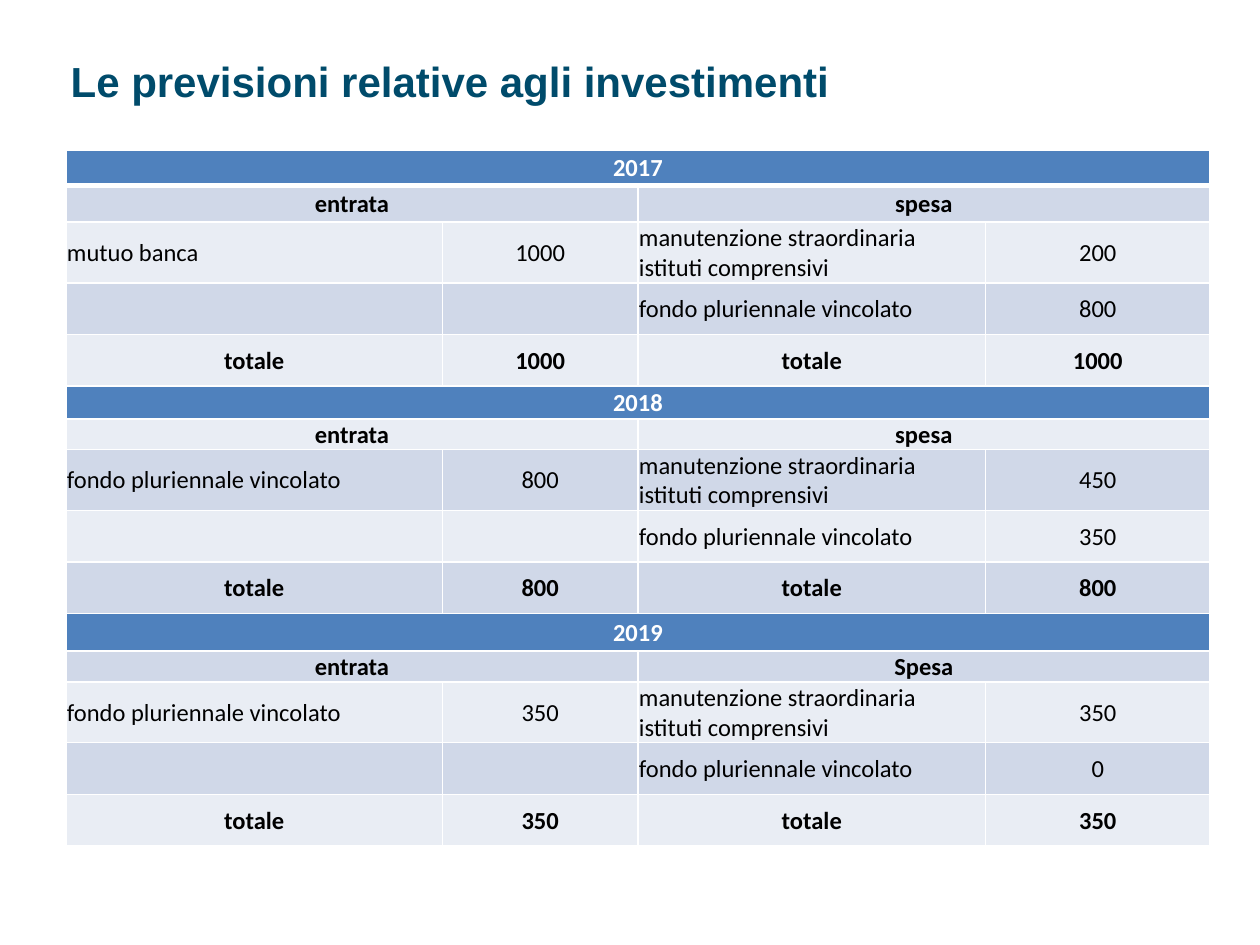
from typing import NamedTuple

from pptx import Presentation
from pptx.dml.color import RGBColor
from pptx.enum.text import MSO_ANCHOR, MSO_AUTO_SIZE, PP_ALIGN
from pptx.oxml import parse_xml
from pptx.oxml.ns import nsdecls
from pptx.util import Cm, Pt

NAVY, BLUE, WHITE, BLACK = "004B6B", "4F81BD", "FFFFFF", "000000"
BANDS = ("E9EDF4", "D0D8E8")
WIDTHS = (7.59, 3.94, 7.01, 4.52)
LABELS = (0, 2)
FUND = "fondo pluriennale vincolato"
WORKS = "manutenzione straordinaria istituti comprensivi"


class Year(NamedTuple):
    name: str
    cost: str       # heading of the spending side
    source: str
    total: str
    works: str
    fund: str
    heights: tuple  # year row and heading row, in cm


YEARS = (
    Year("2017", "spesa", "mutuo banca", "1000", "200", "800", (0.71, 0.74)),
    Year("2018", "spesa", FUND, "800", "450", "350", (0.66, 0.56)),
    Year("2019", "Spesa", FUND, "350", "350", "0", (0.76, 0.58)),
)


def color(code: str) -> RGBColor:
    return RGBColor.from_string(code)


def add_run(para, text: str, font: str, size: int, ink: str, bold: bool) -> None:
    run = para.add_run()
    run.text = text
    run.font.name, run.font.size, run.font.bold = font, Pt(size), bold
    run.font.color.rgb = color(ink)


def set_edges(cell, top: int, base: int) -> None:
    props = cell._tc.get_or_add_tcPr()
    for side, width in (("L", 1), ("R", 1), ("T", top), ("B", base)):
        props.append(parse_xml(
            f'<a:ln{side} {nsdecls("a")} w="{Pt(width)}"><a:solidFill>'
            f'<a:srgbClr val="{WHITE}"/></a:solidFill></a:ln{side}>'))


def fill_row(table, row: int, texts: tuple, fill: str, ink: str = BLACK,
             bold: bool = True) -> None:
    for col, text in enumerate(texts):
        cell = table.cell(row, col)
        # A thicker rule runs under the first row
        set_edges(cell, 3 if row == 1 else 1, 3 if row == 0 else 1)
        cell.fill.solid()
        cell.fill.fore_color.rgb = color(fill)
        cell.vertical_anchor = MSO_ANCHOR.MIDDLE
        cell.margin_left = cell.margin_right = cell.margin_top = Cm(0.02)
        cell.margin_bottom = 0
        if text:
            para = cell.text_frame.paragraphs[0]
            left = col in LABELS and not bold
            para.alignment = PP_ALIGN.LEFT if left else PP_ALIGN.CENTER
            add_run(para, text, "Calibri", 14, ink, bold)


def add_year(table, start: int, year: Year) -> None:
    heights = year.heights + (1.04,) * 3
    for step, height in enumerate(heights):
        table.rows[start + step].height = Cm(height)

    # Year and side headings
    table.cell(start, 0).merge(table.cell(start, 3))
    fill_row(table, start, (year.name, "", "", ""), BLUE, WHITE)
    for col in LABELS:
        table.cell(start + 1, col).merge(table.cell(start + 1, col + 1))
    fill_row(table, start + 1, ("entrata", "", year.cost, ""), BANDS[(start + 1) % 2])

    # Entries and totals
    body = (
        (year.source, year.total, WORKS, year.works),
        ("", "", FUND, year.fund),
        ("totale", year.total) * 2,
    )
    for row, texts in enumerate(body, start + 2):
        fill_row(table, row, texts, BANDS[row % 2], bold=texts[0] == "totale")


def main() -> None:
    deck = Presentation()
    deck.slide_width, deck.slide_height = Cm(25.4), Cm(19.05)
    slide = deck.slides.add_slide(deck.slide_layouts[5])

    # Title
    title = slide.shapes.title
    title.left, title.top = Cm(1.17), Cm(0.91)
    title.width, title.height = Cm(23.06), Cm(1.9)
    frame = title.text_frame
    frame.auto_size = MSO_AUTO_SIZE.NONE
    frame.vertical_anchor = MSO_ANCHOR.TOP
    para = frame.paragraphs[0]
    para.alignment = PP_ALIGN.LEFT
    para.line_spacing = Pt(31)
    add_run(para, "Le previsioni relative agli investimenti", "Arial", 24, NAVY, True)

    # Table, five rows a year
    table = slide.shapes.add_table(
        5 * len(YEARS), len(WIDTHS), Cm(1.33), Cm(3.03), Cm(23.06), Cm(13.92)).table
    for column, width in zip(table.columns, WIDTHS):
        column.width = Cm(width)
    for index, year in enumerate(YEARS):
        add_year(table, 5 * index, year)

    deck.save("out.pptx")


if __name__ == "__main__":
    main()
